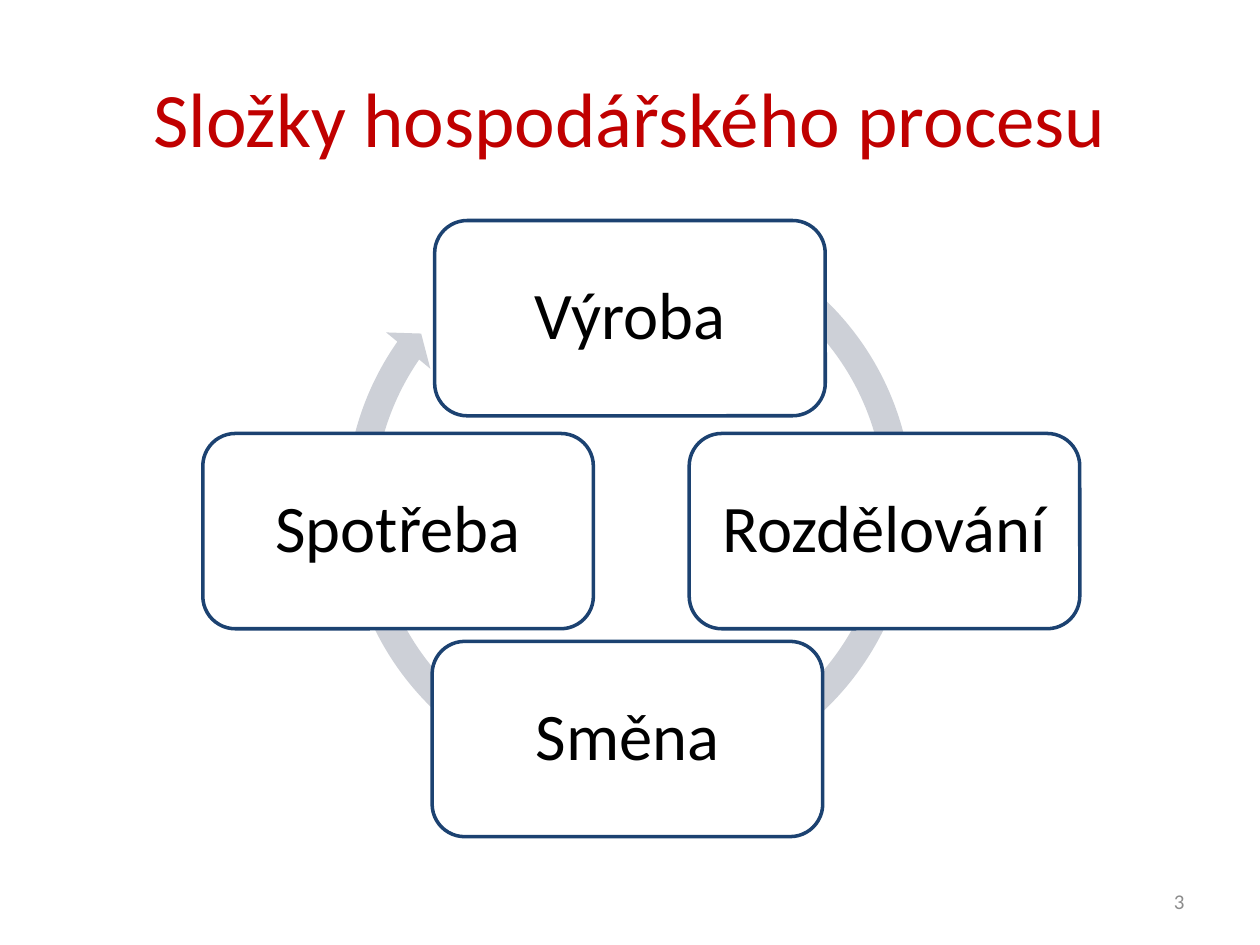
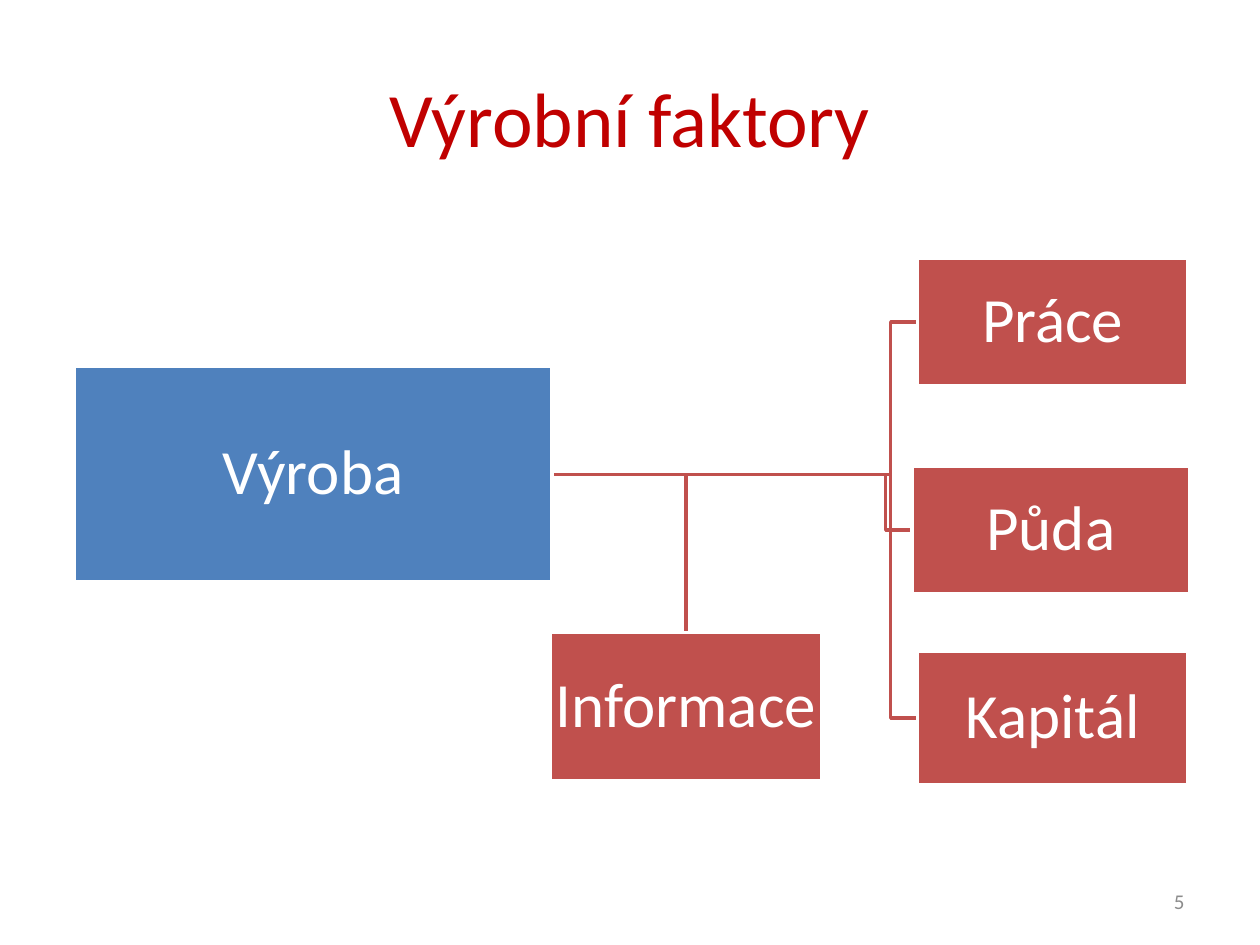
from pptx import Presentation
from pptx.dml.color import RGBColor
from pptx.enum.shapes import MSO_SHAPE
from pptx.enum.text import MSO_ANCHOR, PP_ALIGN
from pptx.util import Inches, Pt

RED, BRICK, BLUE, NAVY = "C00000", "C0504D", "4F81BD", "1C4271"
WHITE, BLACK, GREY, PALE = "FFFFFF", "000000", "8C8C8C", "CDD0D7"


def color(value):
    return RGBColor.from_string(value)


class Deck:
    """Shared style and the slide being built."""

    font = "Calibri"

    def __init__(self):
        self.deck = Presentation()
        self.deck.slide_width, self.deck.slide_height = Inches(10), Inches(7.5)
        self.page = None

    def add_page(self, title, number):
        self.page = self.deck.slides.add_slide(self.deck.slide_layouts[6])
        self.text(title, (0.5, 0.3, 9, 1.25), 44, RED, PP_ALIGN.CENTER)
        self.text(number, (7.17, 6.95, 2.33, 0.4), 12, GREY, PP_ALIGN.RIGHT)

    def fill_text(self, box, words, size, ink, align, spacing=None):
        frame = box.text_frame
        frame.word_wrap = True
        frame.vertical_anchor = MSO_ANCHOR.MIDDLE
        para = frame.paragraphs[0]
        para.alignment, para.line_spacing = align, spacing
        span = para.add_run()
        span.text = words
        for key, value in {"name": self.font, "size": Pt(size)}.items():
            setattr(span.font, key, value)
        span.font.color.rgb = color(ink)

    def text(self, words, place, size, ink, align):
        box = self.page.shapes.add_textbox(*map(Inches, place))
        self.fill_text(box, words, size, ink, align)

    def shape(self, kind, place, fill, line=None):
        shape = self.page.shapes.add_shape(kind, *map(Inches, place))
        shape.shadow.inherit = False
        shape.fill.solid()
        shape.fill.fore_color.rgb = color(fill)
        if line:
            shape.line.color.rgb = color(line)
            shape.line.width = Pt(2)
        else:
            shape.line.fill.background()
        return shape

    def label_box(self, words, kind, place, fill, line, size, ink, inset):
        box = self.shape(kind, place, fill, line)
        for side in ("left", "top", "right", "bottom"):
            setattr(box.text_frame, f"margin_{side}", Inches(inset))
        self.fill_text(box, words, size, ink, PP_ALIGN.CENTER, 0.9)

    def branch(self, points):
        start, *rest = [(Inches(x), Inches(y)) for x, y in points]
        builder = self.page.shapes.build_freeform(*start)
        builder.add_line_segments(rest, close=False)
        line = builder.convert_to_shape()
        line.shadow.inherit = False
        line.fill.background()
        line.line.color.rgb = color(BRICK)
        line.line.width = Pt(2)


def build_cycle(deck):
    deck.add_page("Složky hospodářského procesu", "3")

    # Ring arrow behind the four stages
    ring = deck.shape(MSO_SHAPE.CIRCULAR_ARROW, (2.63, 1.64, 4.73, 4.73), PALE)
    for index, value in enumerate((0.047, 2.729, 128.918, 179.897, 0.048)):
        ring.adjustments[index] = value

    # Stages
    stages = {"Výroba": (3.45, 1.75), "Rozdělování": (5.47, 3.44),
              "Směna": (3.43, 5.09), "Spotřeba": (1.61, 3.44)}
    for name, corner in stages.items():
        deck.label_box(name, MSO_SHAPE.ROUNDED_RECTANGLE, (*corner, 3.1, 1.55),
                       WHITE, NAVY, 38, BLACK, 0.16)


def build_factors(deck):
    deck.add_page("Výrobní faktory", "5")
    root = (0.59, 2.91, 3.79, 1.71)
    below = (4.37, 5.02, 2.15, 1.18)
    factors = {"Práce": (7.28, 2.05, 2.15, 1.01),
               "Půda": (7.24, 3.7, 2.2, 1.01),
               "Kapitál": (7.28, 5.17, 2.15, 1.06)}

    # Branches from the right side of the root
    start_x, start_y = root[0] + root[2], root[1] + root[3] / 2
    drop_x = below[0] + below[2] / 2
    deck.branch([(start_x, start_y), (drop_x, start_y), (drop_x, below[1])])
    for left, top, _, height in factors.values():
        turn_x, end_y = left - 0.21, top + height / 2
        deck.branch([(start_x, start_y), (turn_x, start_y),
                     (turn_x, end_y), (left, end_y)])

    # Root and factor boxes
    boxes = [("Výroba", root, BLUE)]
    boxes += [(name, place, BRICK) for name, place in factors.items()]
    boxes.append(("Informace", below, BRICK))
    for name, place, fill in boxes:
        deck.label_box(name, MSO_SHAPE.RECTANGLE, place, fill, WHITE, 36, WHITE, 0.03)


def main():
    deck = Deck()
    build_cycle(deck)
    build_factors(deck)
    deck.deck.save("out.pptx")


if __name__ == "__main__":
    main()
